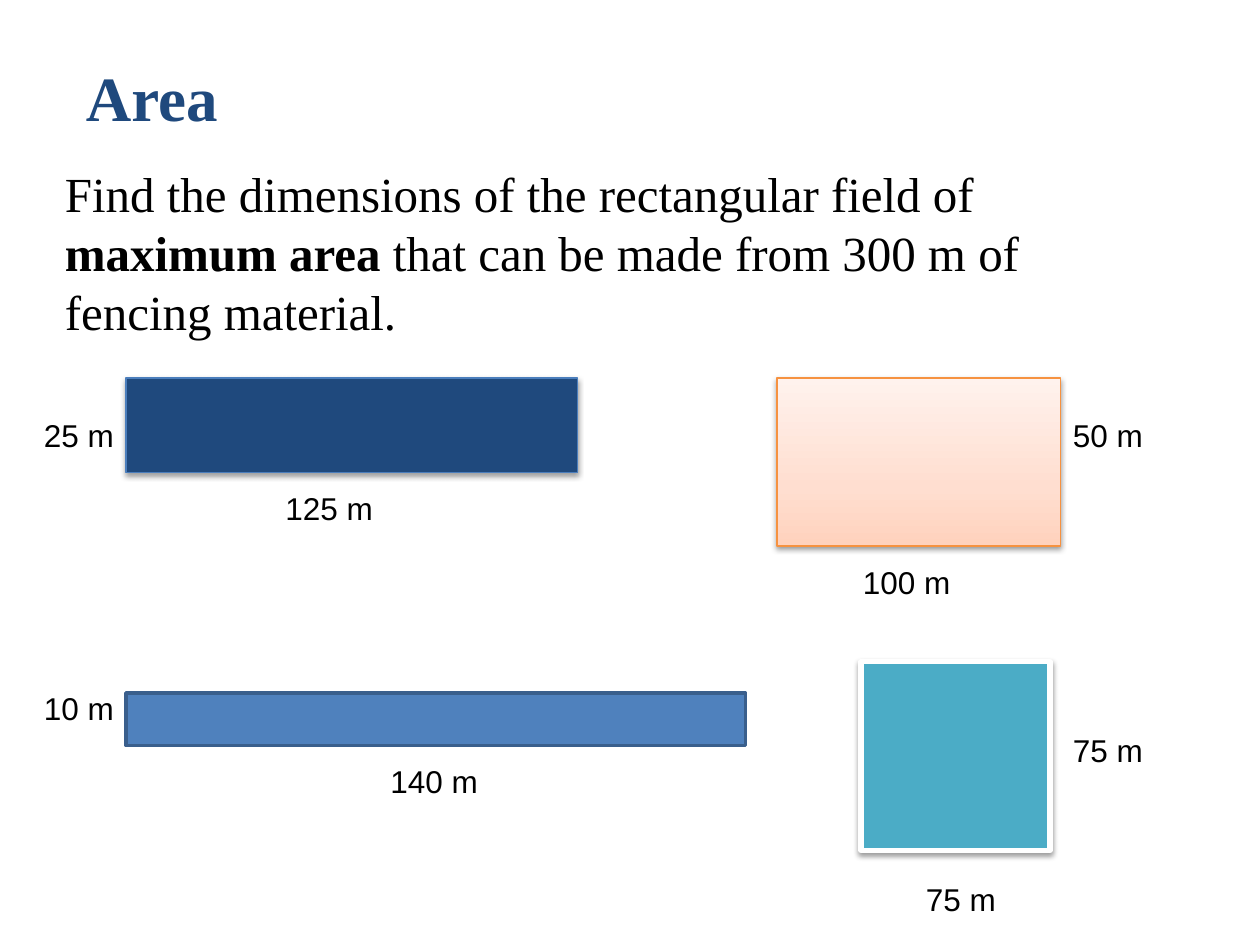
from copy import deepcopy

from lxml.etree import SubElement
from pptx import Presentation
from pptx.dml.color import RGBColor
from pptx.enum.shapes import MSO_SHAPE
from pptx.oxml.ns import qn
from pptx.util import Inches, Pt

WIDE, HIGH = 10, 7.5
COLS, ROWS = 120, 90
LABEL = 4.8  # rows in one label


def color(code):
    return RGBColor.from_string(code)


def place(box):
    """Turn columns and rows of the grid into lengths."""
    x, y, w, h = box
    return [Inches(n * unit) for n, unit in
            ((x, WIDE / COLS), (y, HIGH / ROWS), (w, WIDE / COLS), (h, HIGH / ROWS))]


def write(slide, box, *runs, size=18, font="Arial", tint="000000", wrap=True):
    """Add a text box; each run is a pair of text and bold."""
    frame = slide.shapes.add_textbox(*place(box)).text_frame
    frame.word_wrap = wrap
    for text, bold in runs:
        run = frame.paragraphs[0].add_run()
        run.text = text
        run.font.size, run.font.name, run.font.bold = Pt(size), font, bold
        run.font.color.rgb = color(tint)


def blend(shape, stops):
    """Fill with color stops that run from bottom to top."""
    shape.fill.gradient()
    shape.fill.gradient_angle = 90
    first = shape._element.spPr.find(".//" + qn("a:gs"))
    for _ in range(len(stops) - 2):
        first.addnext(deepcopy(first))
    for stop, (share, code) in zip(shape.fill.gradient_stops, stops):
        stop.position = share
        stop.color.rgb = color(code)


def shade(shape):
    """Cast a soft shadow straight down."""
    effects = shape._element.spPr.find(qn("a:effectLst"))
    outer = SubElement(effects, qn("a:outerShdw"), blurRad="40000", dist="20000",
                       dir="5400000", rotWithShape="0")
    black = SubElement(outer, qn("a:srgbClr"), val="000000")
    SubElement(black, qn("a:alpha"), val="38000")


def field(slide, box, fill, line, weight, side, base, shadow=True):
    """Draw one field; side and base hold text and an offset from its corner."""
    x, y, w, h = box
    shape = slide.shapes.add_shape(MSO_SHAPE.RECTANGLE, *place(box))
    shape.shadow.inherit = False
    if isinstance(fill, str):
        shape.fill.solid()
        shape.fill.fore_color.rgb = color(fill)
    else:
        blend(shape, fill)
    shape.line.color.rgb = color(line)
    shape.line.width = Pt(weight)
    if shadow:
        shade(shape)
    for text, dx, dy, width in (side, base):
        write(slide, (x + dx, y + dy, width, LABEL), (text, False))


def header(slide, box):
    """Place the title over the problem text."""
    x, y, w, h = box
    serif = "Times New Roman"
    write(slide, (x + 2, y, 15, 8.5), ("Area", True),
          size=36, font=serif, tint="1F497D", wrap=False)
    write(slide, (x, y + 10, w, h - 10),
          ("Find the dimensions of the rectangular field of ", False),
          ("maximum area ", True),
          ("that can be made from 300 m of fencing material.", False),
          size=28, font=serif)


def fields(slide, box):
    """Place the four fields, two on the left and two on the right."""
    x, y, w, h = box
    peach = [(0, "FFD2BD"), (0.35, "FFDED0"), (1, "FFF2ED")]
    field(slide, (x + 62, y, 27, 16), peach, "F69240", 0.75,
          ("50 m", 27, 3, 14), ("100 m", 7, 17, 14))
    field(slide, (x + 70, y + 27, 18, 18), "4BACC6", "FFFFFF", 3,
          ("75 m", 19, 6, 14), ("75 m", 5, 20.2, 14))
    field(slide, (x, y, 43, 9), "1F497D", "4B7EBC", 0.75,
          ("25 m", -9, 3, 11), ("125 m", 14, 10, 14))
    field(slide, (x, y + 30, 59, 5), "4F81BD", "3A5F8C", 2,
          ("10 m", -9, -1, 11), ("140 m", 24, 6, 14), shadow=False)


def main():
    deck = Presentation()
    deck.slide_width, deck.slide_height = Inches(WIDE), Inches(HIGH)
    slide = deck.slides.add_slide(deck.slide_layouts[6])
    header(slide, (5, 5, 104, 28))
    fields(slide, (12, 36, 103, 52))
    deck.save("out.pptx")


if __name__ == "__main__":
    main()
